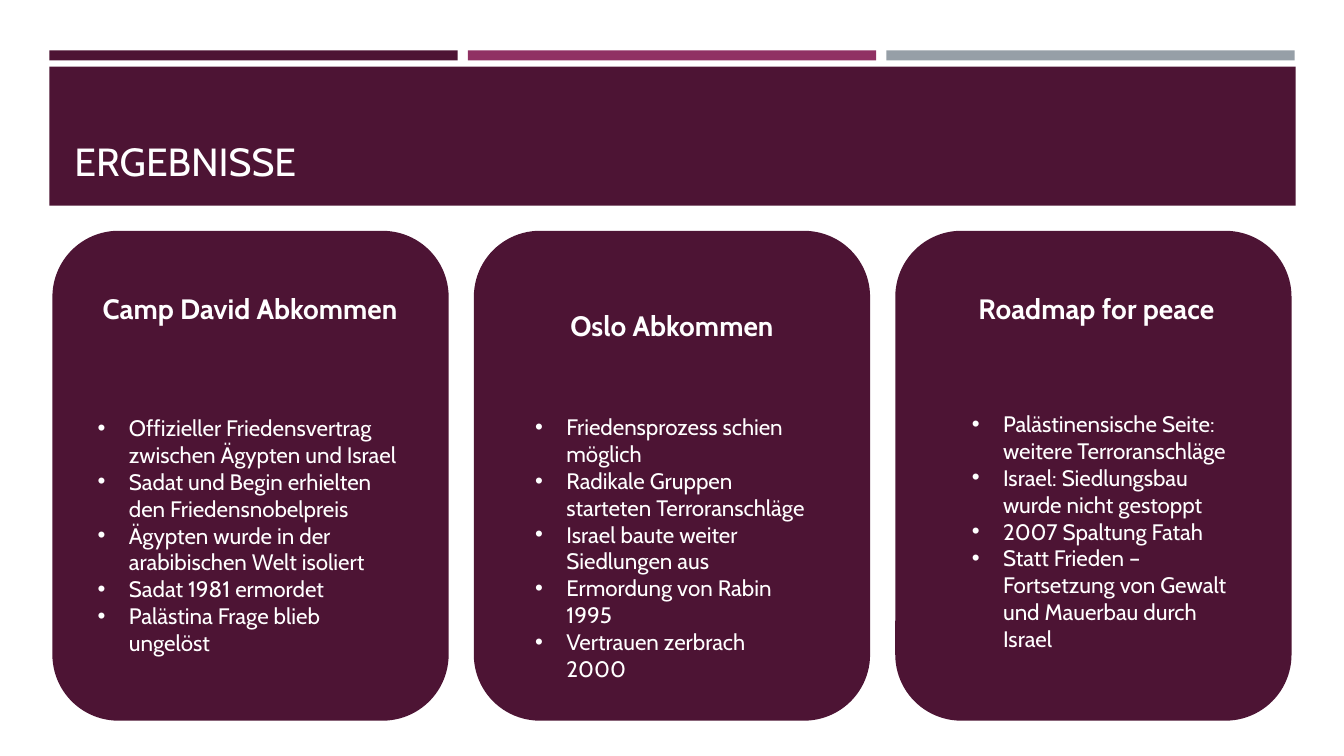
"""Build the slide "Ergebnisse" with three cards on peace agreements."""
from lxml import etree
from pptx import Presentation
from pptx.dml.color import RGBColor
from pptx.enum.shapes import MSO_SHAPE
from pptx.enum.text import MSO_ANCHOR, PP_ALIGN
from pptx.oxml.ns import qn
from pptx.util import Inches, Pt

RECT, ROUNDED = MSO_SHAPE.RECTANGLE, MSO_SHAPE.ROUNDED_RECTANGLE
TOP, BOTTOM = MSO_ANCHOR.TOP, MSO_ANCHOR.BOTTOM
LEFT, CENTER = PP_ALIGN.LEFT, PP_ALIGN.CENTER

PLUM, BERRY, GREY, WHITE = "4D1434", "903163", "969FA7", "FFFFFF"
FONT = "Cabin"
TITLE = "ERGEBNISSE"
BAR_COLOURS = [PLUM, BERRY, GREY]
CARDS = [
    {
        "heading": "Camp David Abkommen",
        "heading_at": (0.87, 2.84, 3.22, 0.77),
        "points": [
            "Offizieller Friedensvertrag zwischen Ägypten und Israel",
            "Sadat und Begin erhielten den Friedensnobelpreis",
            "Ägypten wurde in der arabibischen Welt isoliert",
            "Sadat 1981 ermordet",
            "Palästina Frage blieb ungelöst",
        ],
        "points_at": (0.87, 4.06, 3.22, 2.26),
    },
    {
        "heading": "Oslo Abkommen",
        "heading_at": (5.35, 3.01, 2.63, 0.44),
        "points": [
            "Friedensprozess schien möglich",
            "Radikale Gruppen starteten Terroranschläge",
            "Israel baute weiter Siedlungen aus",
            "Ermordung von Rabin 1995",
            "Vertrauen zerbrach 2000",
        ],
        "points_at": (5.21, 4.05, 2.92, 2.52),
    },
    {
        "heading": "Roadmap for peace",
        "heading_at": (9.56, 2.84, 2.63, 0.77),
        "points": [
            "Palästinensische Seite: weitere Terroranschläge",
            "Israel: Siedlungsbau wurde nicht gestoppt",
            "2007 Spaltung Fatah",
            "Statt Frieden – Fortsetzung von Gewalt und Mauerbau durch Israel",
        ],
        "points_at": (9.54, 4.02, 2.92, 2.52),
    },
]
TITLE_AT = (0.64, 0.8, 12.06, 1.08)
BANNER_AT = (0.49, 0.66, 12.36, 1.38)
BAR_LEFT, BAR_TOP, BAR_WIDTH, BAR_HEIGHT, BAR_GAP = 0.49, 0.5, 4.05, 0.1, 0.1
CARD_LEFT, CARD_TOP, CARD_WIDTH, CARD_HEIGHT, CARD_GAP = 0.52, 2.29, 3.93, 4.86, 0.25
BULLET_INDENT = 0.31


def colour(value):
    return RGBColor.from_string(value)


def add_panel(page, kind, at, fill):
    panel = page.shapes.add_shape(kind, *map(Inches, at))
    panel.shadow.inherit = False
    panel.fill.solid()
    panel.fill.fore_color.rgb = colour(fill)
    panel.line.fill.background()


def add_bullet(para):
    properties = para._p.get_or_add_pPr()
    properties.set("marL", str(Inches(BULLET_INDENT)))
    properties.set("indent", str(-Inches(BULLET_INDENT)))
    etree.SubElement(properties, qn("a:buFont")).set("typeface", "Arial")
    etree.SubElement(properties, qn("a:buChar")).set("char", "•")


def add_text(page, at, lines, size, bold=False, align=LEFT, anchor=TOP, bullets=False):
    frame = page.shapes.add_textbox(*map(Inches, at)).text_frame
    frame.word_wrap = True
    frame.vertical_anchor = anchor
    font_values = {"name": FONT, "size": Pt(size), "bold": bold}
    for index, line in enumerate(lines):
        para = frame.add_paragraph() if index else frame.paragraphs[0]
        para.alignment = align
        if bullets:
            add_bullet(para)
        span = para.add_run()
        span.text = line
        for name, value in font_values.items():
            setattr(span.font, name, value)
        span.font.color.rgb = colour(WHITE)


def main():
    deck = Presentation()
    deck.slide_width, deck.slide_height = Inches(13.33), Inches(7.5)
    page = deck.slides.add_slide(deck.slide_layouts[6])
    page.background.fill.solid()
    page.background.fill.fore_color.rgb = colour(WHITE)

    for index, fill in enumerate(BAR_COLOURS):
        left = BAR_LEFT + index * (BAR_WIDTH + BAR_GAP)
        add_panel(page, RECT, (left, BAR_TOP, BAR_WIDTH, BAR_HEIGHT), fill)
    add_panel(page, RECT, BANNER_AT, PLUM)
    add_text(page, TITLE_AT, [TITLE], 28, anchor=BOTTOM)

    for index, card in enumerate(CARDS):
        left = CARD_LEFT + index * (CARD_WIDTH + CARD_GAP)
        add_panel(page, ROUNDED, (left, CARD_TOP, CARD_WIDTH, CARD_HEIGHT), PLUM)
        add_text(page, card["heading_at"], [card["heading"]], 20, bold=True, align=CENTER)
        add_text(page, card["points_at"], card["points"], 16, bullets=True)

    deck.save("out.pptx")


if __name__ == "__main__":
    main()
